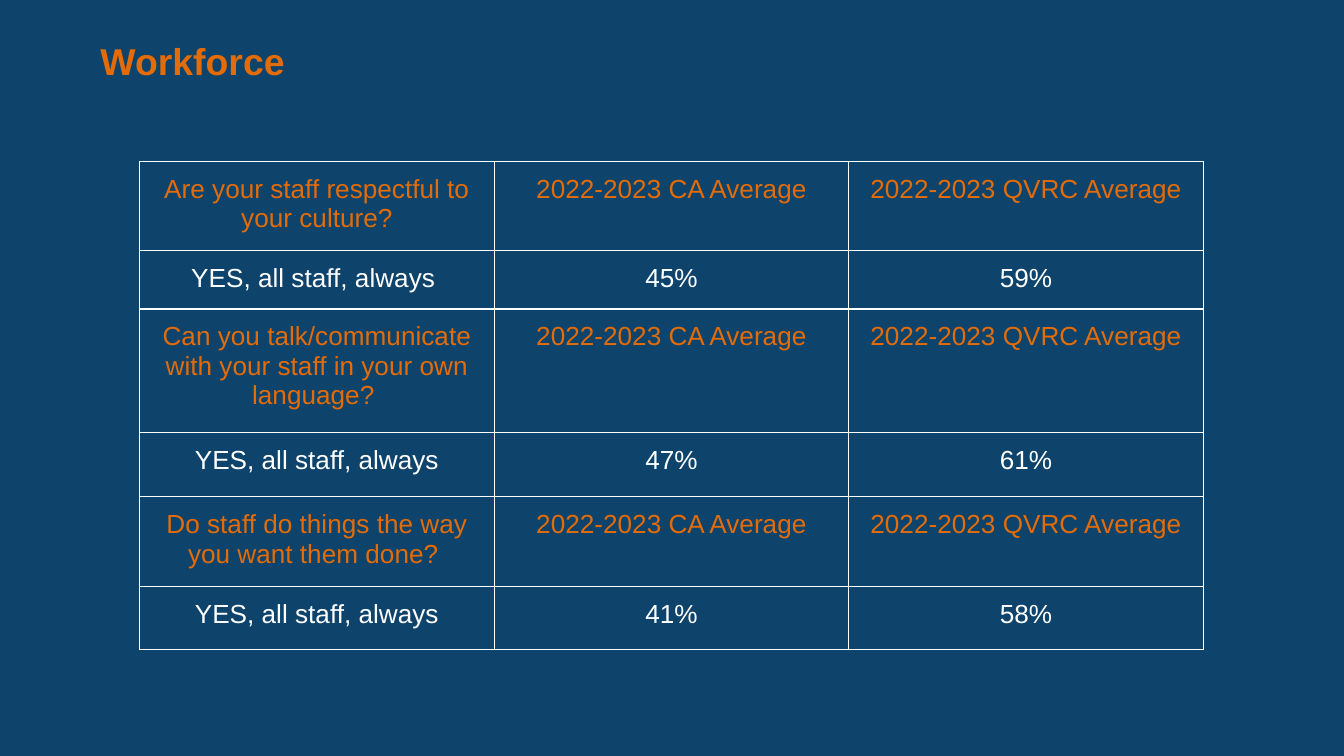
from dataclasses import dataclass

from lxml.etree import SubElement
from pptx import Presentation
from pptx.dml.color import RGBColor
from pptx.enum.text import MSO_AUTO_SIZE as AutoSize, PP_ALIGN as Align
from pptx.oxml.ns import qn
from pptx.util import Cm, Pt

TITLE = "Workforce"
AVERAGES = ("2022-2023 CA Average", "2022-2023 QVRC Average")
QUESTIONS = [
    ("Are your staff respectful to your culture?", "YES, all staff, always ", "45%", "59%"),
    ("Can you talk/communicate with your staff in your own language? ",
     "YES, all staff, always", "47%", "61%"),
    ("Do staff do things the way you want them done? ", "YES, all staff, always", "41%", "58%"),
]
ROW_HEIGHTS = (1.69, 1.1, 2.34, 1.21, 1.69, 1.2)
COLUMN_WIDTH = 6.7
COLUMN_COUNT = 1 + len(AVERAGES)


@dataclass(frozen=True)
class Theme:
    background: str = "0E436B"
    accent: str = "E36C09"
    light: str = "FFFFFF"
    font: str = "Arial"
    title_size: int = 20
    table_size: int = 14
    border: float = 0.75
    inset: float = 0.25


theme = Theme()


def style(paragraph, size, color, bold=False):
    font = paragraph.font
    font.name, font.size, font.bold = theme.font, Pt(size), bold
    font.color.rgb = RGBColor.from_string(color)


def set_margins(holder):
    for side in ("left", "top", "right", "bottom"):
        setattr(holder, f"margin_{side}", Cm(theme.inset))


def add_borders(cell):
    properties = cell._tc.get_or_add_tcPr()
    for edge in ("a:lnL", "a:lnR", "a:lnT", "a:lnB"):
        line = SubElement(properties, qn(edge), w=str(Pt(theme.border)))
        fill = SubElement(line, qn("a:solidFill"))
        SubElement(fill, qn("a:srgbClr"), val=theme.light)


def fill_cell(cell, text, color):
    set_margins(cell)
    add_borders(cell)
    cell.fill.background()
    cell.text = text
    paragraph = cell.text_frame.paragraphs[0]
    paragraph.alignment = Align.CENTER
    style(paragraph, theme.table_size, color)


presentation = Presentation()
presentation.slide_width, presentation.slide_height = Cm(25.4), Cm(14.29)
slide = presentation.slides.add_slide(presentation.slide_layouts[6])
slide.background.fill.solid()
slide.background.fill.fore_color.rgb = RGBColor.from_string(theme.background)

title_frame = slide.shapes.add_textbox(Cm(1.65), Cm(0.48), Cm(8.33), Cm(1.37)).text_frame
title_frame.word_wrap = True
title_frame.auto_size = AutoSize.SHAPE_TO_FIT_TEXT
set_margins(title_frame)
title_frame.text = TITLE
style(title_frame.paragraphs[0], theme.title_size, theme.accent, bold=True)

rows = []
for question, answer, *values in QUESTIONS:
    rows.append((theme.accent, (question, *AVERAGES)))
    rows.append((theme.light, (answer, *values)))

table = slide.shapes.add_table(
    len(rows), COLUMN_COUNT, Cm(2.64), Cm(3.05),
    Cm(COLUMN_WIDTH * COLUMN_COUNT), Cm(sum(ROW_HEIGHTS)),
).table
table.first_row = table.horz_banding = False
for column in table.columns:
    column.width = Cm(COLUMN_WIDTH)
for row, height, (color, texts) in zip(table.rows, ROW_HEIGHTS, rows):
    row.height = Cm(height)
    for cell, text in zip(row.cells, texts):
        fill_cell(cell, text, color)

presentation.save("out.pptx")
